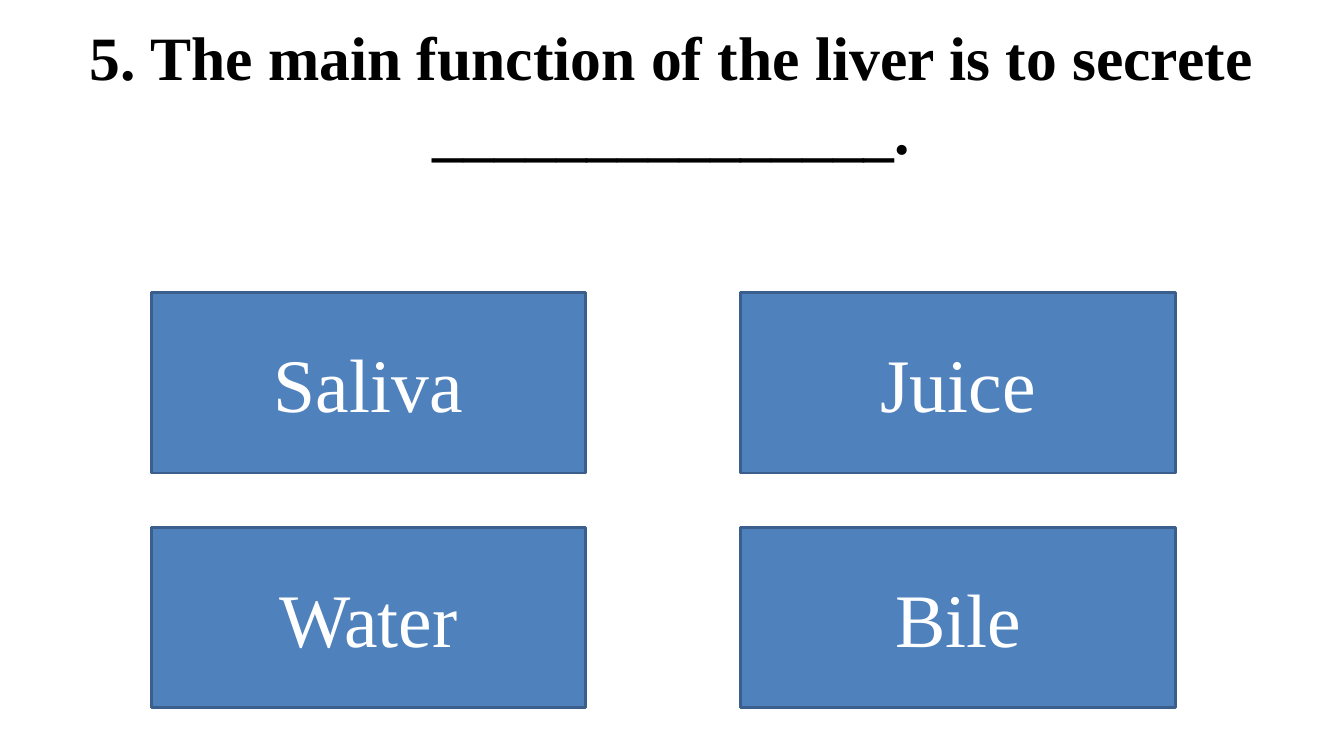
from pptx import Presentation
from pptx.dml.color import RGBColor
from pptx.enum.shapes import MSO_SHAPE
from pptx.enum.text import MSO_ANCHOR, PP_ALIGN
from pptx.util import Cm, Pt

RECTANGLE = MSO_SHAPE.RECTANGLE
MIDDLE = MSO_ANCHOR.MIDDLE
CENTER = PP_ALIGN.CENTER

BLACK = RGBColor(0x00, 0x00, 0x00)
WHITE = RGBColor(0xFF, 0xFF, 0xFF)
BLUE = RGBColor(0x4F, 0x81, 0xBD)
DARK_BLUE = RGBColor(0x3A, 0x5F, 0x8C)

QUESTION_FONT = {"name": "Times New Roman", "size": Pt(44), "bold": True}
ANSWER_FONT = {"name": "Times New Roman", "size": Pt(54), "bold": False}

QUESTION = "5. The main function of the liver is to secrete _______________."
ANSWERS = [["Saliva", "Juice"], ["Water", "Bile"]]
ANSWER_WIDTH, ANSWER_HEIGHT = 10.95, 4.55


def write_centered(shape, text, font_format, color):
    frame = shape.text_frame
    frame.word_wrap = True
    frame.vertical_anchor = MIDDLE
    paragraph = frame.paragraphs[0]
    paragraph.alignment = CENTER
    run = paragraph.add_run()
    run.text = text
    for attribute, value in font_format.items():
        setattr(run.font, attribute, value)
    run.font.color.rgb = color


def add_question(slide, left, top, width, height):
    question = slide.shapes.add_textbox(Cm(left), Cm(top), Cm(width), Cm(height))
    write_centered(question, QUESTION, QUESTION_FONT, BLACK)


def add_answers(slide, left, top, width, height):
    """Spread the answer boxes over the area, flush with its edges."""
    column_step = (width - ANSWER_WIDTH) / (len(ANSWERS[0]) - 1)
    row_step = (height - ANSWER_HEIGHT) / (len(ANSWERS) - 1)
    for row, answers in enumerate(ANSWERS):
        for column, answer in enumerate(answers):
            box = slide.shapes.add_shape(
                RECTANGLE,
                Cm(left + column * column_step), Cm(top + row * row_step),
                Cm(ANSWER_WIDTH), Cm(ANSWER_HEIGHT))
            box.shadow.inherit = False
            box.fill.solid()
            box.fill.fore_color.rgb = BLUE
            box.line.color.rgb = DARK_BLUE
            box.line.width = Pt(2)
            write_centered(box, answer, ANSWER_FONT, WHITE)


def main():
    presentation = Presentation()
    presentation.slide_width = Cm(33.87)
    presentation.slide_height = Cm(19.05)
    slide = presentation.slides.add_slide(presentation.slide_layouts[6])
    add_question(slide, 1.69, 0.76, 30.48, 3.18)
    add_answers(slide, 3.81, 7.37, 25.81, 10.47)
    presentation.save("out.pptx")


if __name__ == "__main__":
    main()
